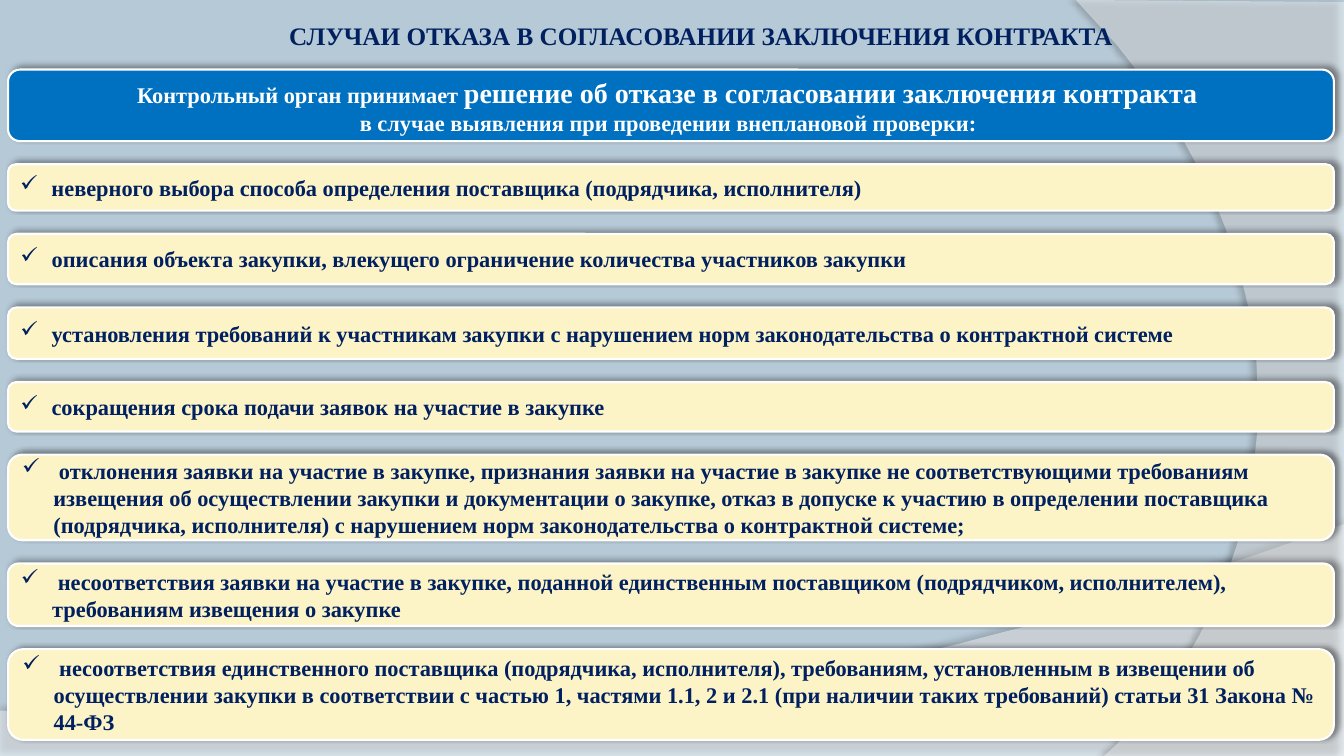
from dataclasses import dataclass

from lxml import etree
from pptx import Presentation
from pptx.dml.color import RGBColor
from pptx.enum.shapes import MSO_SHAPE
from pptx.enum.text import MSO_ANCHOR, MSO_AUTO_SIZE, PP_ALIGN
from pptx.oxml.ns import qn
from pptx.util import Pt

PX = 9144  # EMU in one px, 100 px to the inch
SLIDE_W, SLIDE_H = 1333, 750
ROUNDED = MSO_SHAPE.ROUNDED_RECTANGLE
MIDDLE = MSO_ANCHOR.MIDDLE
NO_AUTOFIT = MSO_AUTO_SIZE.NONE
CENTER, LEFT = PP_ALIGN.CENTER, PP_ALIGN.LEFT
TITLE_ONLY = 5


@dataclass(frozen=True)
class Theme:
    font: str = "Times New Roman"
    background: str = "B6C9D6"
    navy: str = "002060"
    blue: str = "0070C0"
    cream: str = "FCF4C7"
    white: str = "FFFFFF"
    title_size: int = 18
    body_size: int = 16
    accent_size: int = 20
    border: float = 1.5


THEME = Theme()

TITLE = "СЛУЧАИ ОТКАЗА В СОГЛАСОВАНИИ ЗАКЛЮЧЕНИЯ КОНТРАКТА "
DECISION = [
    [("Контрольный орган принимает ", THEME.body_size),
     ("решение об отказе в согласовании заключения контракта ", THEME.accent_size)],
    [("в случае выявления при проведении внеплановой проверки: ", THEME.body_size)],
]
# Card height in px and its wording
REASONS = [
    (46, "неверного выбора способа определения поставщика (подрядчика, исполнителя)"),
    (50, "описания объекта закупки, влекущего ограничение количества участников закупки"),
    (51, "установления требований к участникам закупки с нарушением норм "
         "законодательства о контрактной системе"),
    (49, "сокращения срока подачи заявок на участие в закупке"),
    (85, " отклонения заявки на участие в закупке, признания заявки на участие в закупке "
         "не соответствующими требованиям извещения об осуществлении закупки и документации "
         "о закупке, отказ в допуске к участию в определении поставщика (подрядчика, "
         "исполнителя) с нарушением норм законодательства о контрактной системе;"),
    (62, " несоответствия заявки на участие в закупке, поданной единственным поставщиком "
         "(подрядчиком, исполнителем), требованиям извещения о закупке"),
    (90, " несоответствия единственного поставщика (подрядчика, исполнителя), требованиям, "
         "установленным в извещении об осуществлении закупки в соответствии с частью 1, "
         "частями 1.1, 2 и 2.1 (при наличии таких требований) статьи 31 Закона № 44-ФЗ"),
]
CARD_X, CARD_W, CARD_GAP = 8, 1315, 23
DECISION_Y, DECISION_H = 69, 71
BULLET_INDENT = 31


def rgb(color):
    return RGBColor.from_string(color)


def apply(target, values):
    for name, value in values.items():
        setattr(target, name, value)


def add_shadow(shape, opacity, distance, angle):
    """Give the shape a soft black outer shadow."""
    shape.shadow.inherit = False
    effects = shape._element.spPr.find(qn("a:effectLst"))
    outer = etree.SubElement(effects, qn("a:outerShdw"), blurRad=str(Pt(4)),
                             dist=str(Pt(distance)), dir=str(angle * 60000),
                             algn="ctr", rotWithShape="0")
    black = etree.SubElement(outer, qn("a:srgbClr"), val="000000")
    etree.SubElement(black, qn("a:alpha"), val=str(opacity * 1000))


def bezier(start, control1, control2, end, steps=40):
    """Points along a cubic curve, without its start."""
    points = []
    for step in range(1, steps + 1):
        t = step / steps
        weights = ((1 - t) ** 3, 3 * t * (1 - t) ** 2, 3 * t * t * (1 - t), t ** 3)
        corners = (start, control1, control2, end)
        points.append(tuple(sum(w * c[axis] for w, c in zip(weights, corners))
                            for axis in (0, 1)))
    return points


def add_swoosh(slide, outline, opacity, shadow):
    builder = slide.shapes.build_freeform(*outline[0], scale=PX)
    builder.add_line_segments(outline[1:], close=True)
    swoosh = builder.convert_to_shape()
    swoosh.fill.solid()
    swoosh.fill.fore_color.rgb = rgb(THEME.white)
    tint = swoosh._element.spPr.find(qn("a:solidFill")).find(qn("a:srgbClr"))
    etree.SubElement(tint, qn("a:alpha"), val=str(opacity * 1000))
    swoosh.line.fill.background()
    add_shadow(swoosh, *shadow)


def add_run(paragraph, text, size, color):
    run = paragraph.add_run()
    run.text = text
    apply(run.font, {"name": THEME.font, "size": Pt(size), "bold": True})
    run.font.color.rgb = rgb(color)


def add_check_bullet(paragraph):
    indent = BULLET_INDENT * PX
    properties = paragraph._p.get_or_add_pPr()
    properties.set("marL", str(indent))
    properties.set("indent", str(-indent))
    etree.SubElement(properties, qn("a:buChar"), char="✓")


def add_card(slide, top, height, fill):
    card = slide.shapes.add_shape(ROUNDED, CARD_X * PX, top * PX, CARD_W * PX, height * PX)
    card.fill.solid()
    card.fill.fore_color.rgb = rgb(fill)
    card.line.color.rgb = rgb(THEME.white)
    card.line.width = Pt(THEME.border)
    add_shadow(card, 40, 3, 315)
    apply(card.text_frame, {"word_wrap": True, "vertical_anchor": MIDDLE})
    return card.text_frame


def add_decision(slide):
    frame = add_card(slide, DECISION_Y, DECISION_H, THEME.blue)
    for index, line in enumerate(DECISION):
        paragraph = frame.add_paragraph() if index else frame.paragraphs[0]
        paragraph.alignment = CENTER
        for text, size in line:
            add_run(paragraph, text, size, THEME.white)


def add_reason(slide, top, height, text):
    paragraph = add_card(slide, top, height, THEME.cream).paragraphs[0]
    paragraph.alignment = LEFT
    add_check_bullet(paragraph)
    add_run(paragraph, text, THEME.body_size, THEME.navy)


def set_title(slide):
    title = slide.shapes.title
    apply(title, {"left": 32 * PX, "top": 8 * PX, "width": SLIDE_W * PX, "height": 54 * PX})
    margins = {f"margin_{side}": 5 * PX for side in ("left", "right", "top", "bottom")}
    apply(title.text_frame, {"word_wrap": True, "vertical_anchor": MIDDLE,
                             "auto_size": NO_AUTOFIT, **margins})
    paragraph = title.text_frame.paragraphs[0]
    paragraph.alignment = CENTER
    add_run(paragraph, TITLE, THEME.title_size, THEME.navy)
    # Bring the title in front of the backdrop
    slide.shapes._spTree.append(title._element)


def add_backdrop(slide):
    slide.background.fill.solid()
    slide.background.fill.fore_color.rgb = rgb(THEME.background)
    bottom_wave = [(0, 705), (0, SLIDE_H), (SLIDE_W, SLIDE_H), (SLIDE_W, 520),
                   *bezier((SLIDE_W, 520), (745, 729), (521, 719), (0, 705))]
    right_arc = [(SLIDE_W, 2), (SLIDE_W, SLIDE_H), (1095, SLIDE_H),
                 *bezier((1095, SLIDE_H), (1246, 619), (1357, 300), (1067, 0))]
    add_swoosh(slide, bottom_wave, 45, (35, 3.5, 270))
    add_swoosh(slide, right_arc, 40, (45, 4, 180))


def main():
    deck = Presentation()
    apply(deck, {"slide_width": SLIDE_W * PX, "slide_height": SLIDE_H * PX})
    slide = deck.slides.add_slide(deck.slide_layouts[TITLE_ONLY])

    add_backdrop(slide)
    set_title(slide)
    add_decision(slide)

    # Reasons stacked with equal gaps below the decision
    top = DECISION_Y + DECISION_H + CARD_GAP
    for height, text in REASONS:
        add_reason(slide, top, height, text)
        top += height + CARD_GAP

    deck.save("out.pptx")


if __name__ == "__main__":
    main()
